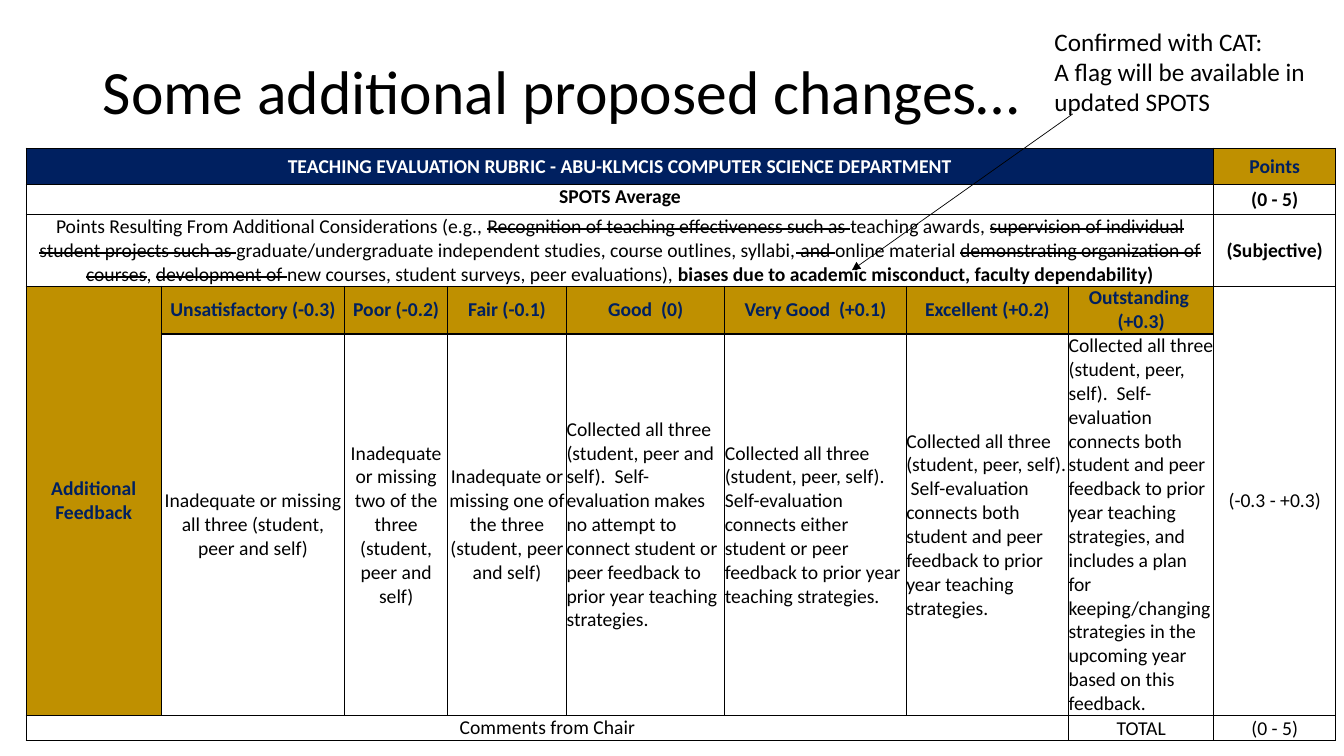
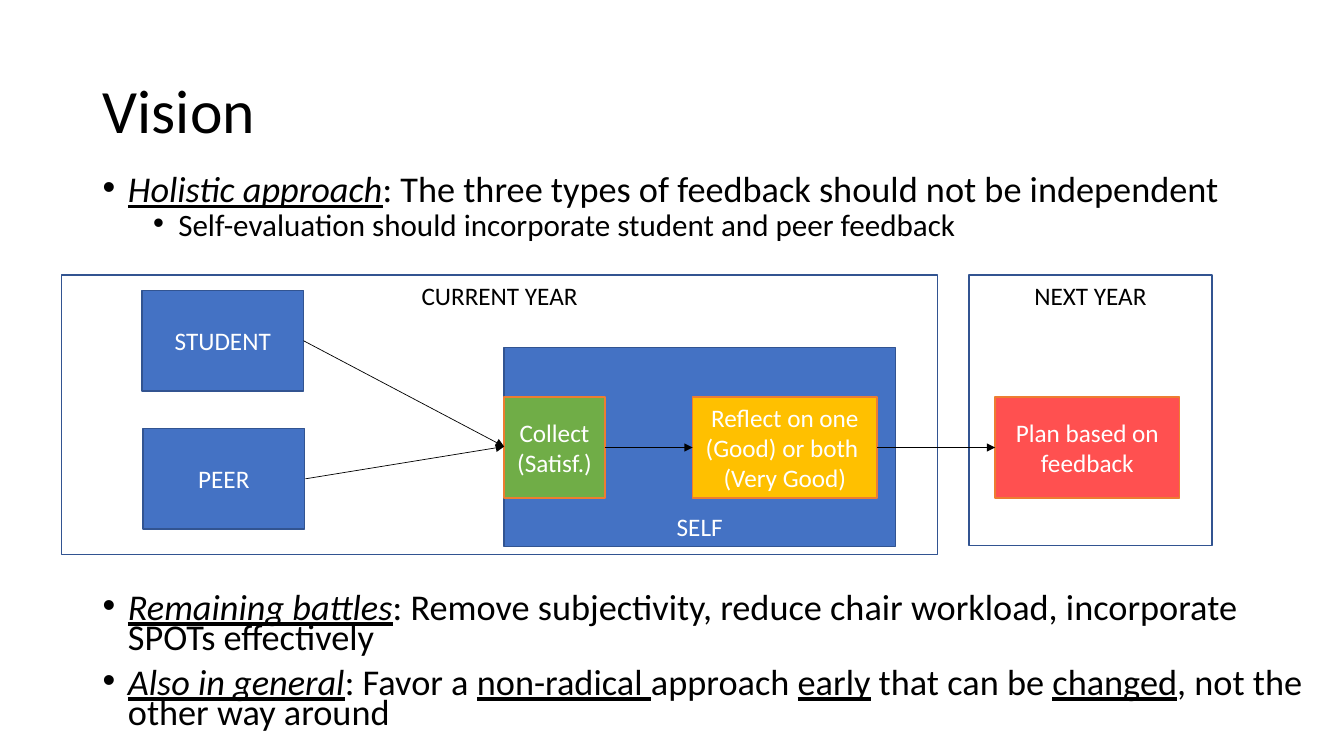
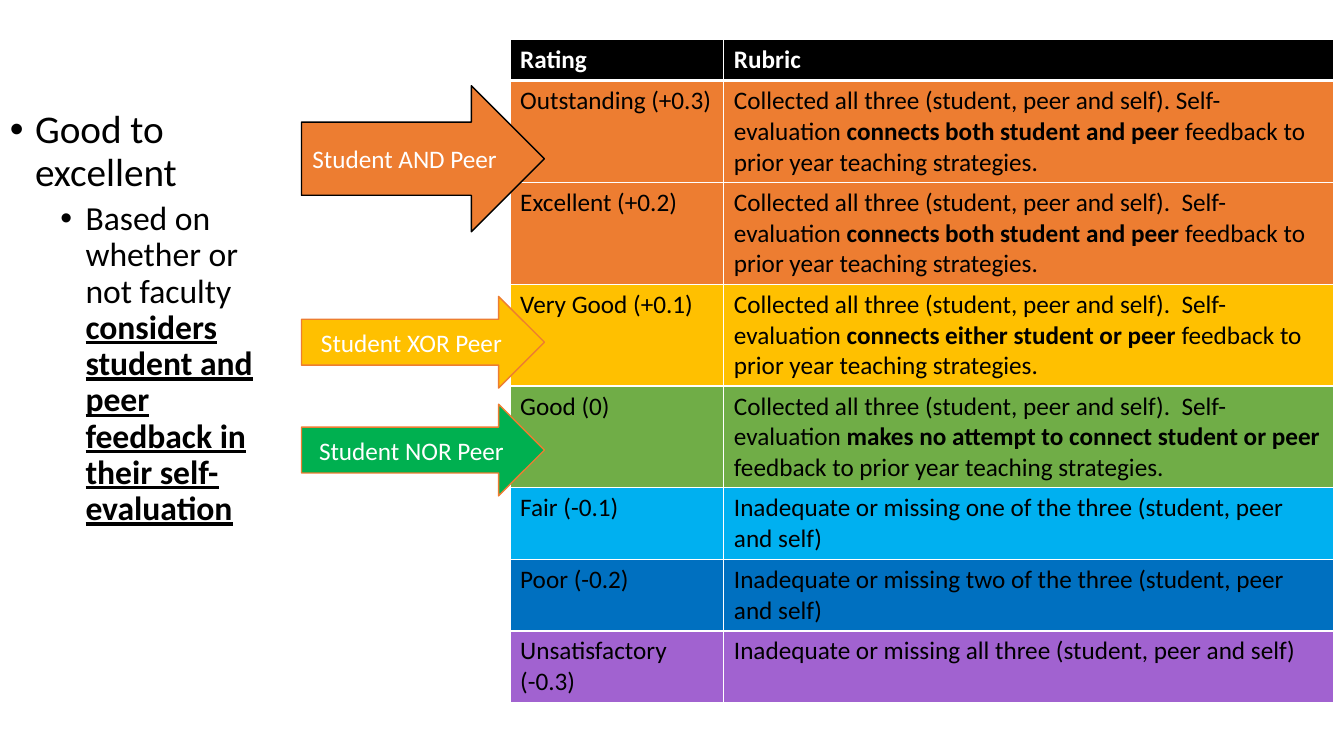
"""Build three slides on a proposed teaching evaluation rubric."""
from lxml import etree
from pptx import Presentation
from pptx.dml.color import RGBColor
from pptx.enum.shapes import MSO_CONNECTOR, MSO_SHAPE
from pptx.enum.text import MSO_ANCHOR, PP_ALIGN
from pptx.oxml.ns import qn
from pptx.util import Emu, Pt

LEFT, CENTER = PP_ALIGN.LEFT, PP_ALIGN.CENTER
TOP, MIDDLE, BOTTOM = MSO_ANCHOR.TOP, MSO_ANCHOR.MIDDLE, MSO_ANCHOR.BOTTOM
RECTANGLE, RIGHT_ARROW = MSO_SHAPE.RECTANGLE, MSO_SHAPE.RIGHT_ARROW
STRAIGHT = MSO_CONNECTOR.STRAIGHT

EMU_PER_PX = 9144
FONT = "Calibri"
TITLE_ONLY, BLANK = 5, 6
COLORS = {
    "black": "000000", "white": "FFFFFF", "navy": "002060", "gold": "BF9000",
    "blue": "4472C4", "edge": "325491", "green": "70AD47", "orange": "ED7D31",
    "amber": "FFC000", "red": "FF5050", "emerald": "00B050", "sky": "00B0F0",
    "ocean": "0070C0", "purple": "A162D0",
}
FLAGS = {"b": "bold", "i": "italic", "u": "underline"}


def px(length):
    return Emu(length * EMU_PER_PX)


def rgb(name):
    return RGBColor.from_string(COLORS[name])


def apply(target, values):
    for name, value in values.items():
        setattr(target, name, value)


class Deck:
    """Holds the shared style and the slide being filled."""

    def __init__(self, width, height):
        self.presentation = Presentation()
        apply(self.presentation, {"slide_width": px(width), "slide_height": px(height)})
        self.slide = None

    def add_slide(self, title=None, top=0):
        layout = self.presentation.slide_layouts[BLANK if title is None else TITLE_ONLY]
        self.slide = self.presentation.slides.add_slide(layout)
        if title is not None:
            placeholder = self.slide.shapes.title
            apply(placeholder, {"left": px(92), "top": px(top), "width": px(1150), "height": px(145)})
            placeholder.text_frame.vertical_anchor = MIDDLE
            self.set_text(placeholder.text_frame, [title], size=44, line_spacing=0.9)

    def set_runs(self, paragraph, runs, size=18, color="black", bold=False, **layout):
        apply(paragraph, {"alignment": LEFT, **layout})
        for item in [runs] if isinstance(runs, str) else runs:
            text, flags = (item, "") if isinstance(item, str) else item
            run = paragraph.add_run()
            run.text = text
            apply(run.font, {"name": FONT, "size": Pt(size), "bold": bold})
            apply(run.font, {FLAGS[flag]: True for flag in flags if flag in FLAGS})
            run.font.color.rgb = rgb(color)
            if "s" in flags:
                run.font._element.set("strike", "sngStrike")

    def set_text(self, frame, paragraphs, **style):
        frame.word_wrap = True
        for index, runs in enumerate(paragraphs):
            paragraph = frame.add_paragraph() if index else frame.paragraphs[0]
            self.set_runs(paragraph, runs, **style)

    def text_box(self, box, paragraphs):
        shape = self.slide.shapes.add_textbox(*map(px, box))
        self.set_text(shape.text_frame, paragraphs)

    def bullets(self, box, items, sizes, line_spacing):
        frame = self.slide.shapes.add_textbox(*map(px, box)).text_frame
        frame.word_wrap = True
        for index, (level, space, runs) in enumerate(items):
            paragraph = frame.add_paragraph() if index else frame.paragraphs[0]
            self.set_runs(paragraph, runs, size=sizes[level], level=level,
                          line_spacing=line_spacing, space_before=Pt(space))
            properties = paragraph._p.get_or_add_pPr()
            properties.set("marL", str(px(25 + 50 * level)))
            properties.set("indent", str(px(-25)))
            etree.SubElement(properties, qn("a:buFont"), typeface="Arial")
            etree.SubElement(properties, qn("a:buChar"), char="•")

    def shape(self, kind, box, paragraphs, fill=None, line="orange", color="white", anchor=MIDDLE):
        shape = self.slide.shapes.add_shape(kind, *map(px, box))
        shape.shadow.inherit = False
        if fill:
            shape.fill.solid()
            shape.fill.fore_color.rgb = rgb(fill)
        else:
            shape.fill.background()
        shape.line.color.rgb = rgb(line)
        shape.line.width = Pt(1)
        shape.text_frame.vertical_anchor = anchor
        self.set_text(shape.text_frame, paragraphs, color=color, alignment=CENTER)

    def arrow(self, start, end):
        connector = self.slide.shapes.add_connector(STRAIGHT, *map(px, start + end))
        connector.line.color.rgb = rgb("black")
        connector.line.width = Pt(0.5)
        etree.SubElement(connector.line._get_or_add_ln(), qn("a:tailEnd"), type="triangle")
        etree.SubElement(connector._element.spPr, qn("a:effectLst"))

    def table(self, left, top, columns, rows, border):
        box = (left, top, sum(columns), sum(rows))
        table = self.slide.shapes.add_table(len(rows), len(columns), *map(px, box)).table
        apply(table, {"first_row": False, "horz_banding": False})
        for column, width in zip(table.columns, columns):
            column.width = px(width)
        for row, height in zip(table.rows, rows):
            row.height = px(height)
        for cell in table.iter_cells():
            self.borders(cell, border)
        return table

    def borders(self, cell, color, bottom=1):
        properties = cell._tc.get_or_add_tcPr()
        for side, width in {"L": 1, "R": 1, "T": 1, "B": bottom}.items():
            tag = qn(f"a:ln{side}")
            for old in properties.findall(tag):
                properties.remove(old)
            line = etree.SubElement(properties, tag, w=str(Pt(width)))
            fill = etree.SubElement(line, qn("a:solidFill"))
            etree.SubElement(fill, qn("a:srgbClr"), val=COLORS[color])

    def cell(self, table, place, runs, fill="white", span=(1, 1), anchor=TOP, inset=None, **style):
        row, column = place
        cell = table.cell(row, column)
        if span != (1, 1):
            cell.merge(table.cell(row + span[0] - 1, column + span[1] - 1))
        cell.fill.solid()
        cell.fill.fore_color.rgb = rgb(fill)
        cell.vertical_anchor = anchor
        if inset is not None:
            sides = ("left", "right", "top", "bottom")
            apply(cell, {f"margin_{side}": px(inset) for side in sides})
        self.set_text(cell.text_frame, [runs], **style)


def changes_slide(deck):
    deck.add_slide("Some additional proposed changes…", 21)
    table = deck.table(26, 147, [134, 182, 102, 118, 157, 180, 161, 144, 121],
                       [36, 30, 71, 47, 374, 25], "black")

    def put(row, column, runs, **style):
        style = {"size": 14, "alignment": CENTER, "anchor": MIDDLE, "inset": 0, **style}
        deck.cell(table, (row, column), runs, **style)

    heading = {"fill": "gold", "color": "navy", "bold": True}
    considerations = [
        "Points Resulting From Additional Considerations (e.g., ",
        ("Recognition of teaching effectiveness such as ", "s"), "teaching awards, ",
        ("supervision of individual student projects such as ", "s"),
        "graduate/undergraduate independent studies, course outlines, syllabi,",
        (" and ", "s"), "online material ",
        ("demonstrating organization of courses", "s"), ", ", ("development of ", "s"),
        "new courses, student surveys, peer evaluations),",
        (" biases due to academic misconduct, faculty dependability)", "b"),
    ]
    put(0, 0, "TEACHING EVALUATION RUBRIC - ABU-KLMCIS COMPUTER SCIENCE DEPARTMENT",
        span=(1, 8), fill="navy", color="white", bold=True)
    put(0, 8, "Points", **heading)
    put(1, 0, "SPOTS Average", span=(1, 8), anchor=TOP, bold=True)
    put(1, 8, "(0 - 5)", bold=True)
    put(2, 0, considerations, span=(1, 8), anchor=TOP)
    put(2, 8, "(Subjective)", bold=True)
    put(3, 0, "Additional Feedback", span=(2, 1), **heading)
    put(3, 8, "(-0.3 - +0.3)", span=(2, 1))

    missing = "Inadequate or missing {} three (student, peer and self)"
    collected = "Collected all three (student, peer, self).  Self-evaluation connects "
    prior = " feedback to prior year teaching strategies"
    ratings = [
        ("Unsatisfactory (-0.3)", missing.format("all"), CENTER),
        ("Poor (-0.2)", missing.format("two of the"), CENTER),
        ("Fair (-0.1)", missing.format("one of the"), CENTER),
        ("Good  (0)", "Collected all three (student, peer and self).  Self-evaluation makes "
         f"no attempt to connect student or peer{prior}.", LEFT),
        ("Very Good  (+0.1)", f"{collected}either student or peer{prior}.", LEFT),
        ("Excellent (+0.2)", f"{collected}both student and peer{prior}.", LEFT),
        ("Outstanding  (+0.3)", f"{collected}both student and peer{prior}, and includes a plan for "
         "keeping/changing strategies in the upcoming year based on this feedback.", LEFT),
    ]
    for column, (rating, rubric, alignment) in enumerate(ratings, start=1):
        put(3, column, rating, **heading)
        put(4, column, rubric, alignment=alignment)
    put(5, 0, "Comments from Chair", span=(1, 7), anchor=TOP)
    put(5, 7, "TOTAL")
    put(5, 8, "(0 - 5)")

    deck.arrow((1064, 113), (845, 268))
    deck.text_box((1036, 21, 272, 101),
                  ["Confirmed with CAT:", "A flag will be available in", "updated SPOTS"])


def vision_slide(deck):
    deck.add_slide("Vision", 40)
    deck.bullets((92, 172, 1229, 570), [
        (0, 10, [("Holistic approach", "iu"),
                 ": The three types of feedback should not be independent"]),
        (1, 5, "Self-evaluation should incorporate student and peer feedback"),
        (0, 253, [("Remaining battles", "iu"),
                  ": Remove subjectivity, reduce chair workload, incorporate SPOTs effectively"]),
        (0, 10, [("Also in general", "iu"), ": Favor a ", ("non-radical ", "u"), "approach ",
                 ("early", "u"), " that can be ", ("changed", "u"), ", not the other way around"]),
    ], sizes=(25.9, 22.2), line_spacing=0.7)

    for box, year in [((61, 273, 869, 277), "CURRENT YEAR"), ((961, 273, 241, 268), "NEXT YEAR")]:
        deck.shape(RECTANGLE, box, [year], line="edge", color="black", anchor=TOP)
    for box, source, anchor in [((141, 288, 160, 100), "STUDENT", MIDDLE),
                                ((142, 425, 160, 100), "PEER", MIDDLE),
                                ((500, 345, 388, 197), "SELF", BOTTOM)]:
        deck.shape(RECTANGLE, box, [source], fill="blue", line="edge", anchor=anchor)
    for left, width, fill, step in [
        (500, 100, "green", ["Collect", "(Satisf.)"]),
        (687, 183, "amber", ["Reflect on one (Good) or both ", "(Very Good)"]),
        (987, 183, "red", ["Plan based on feedback"]),
    ]:
        deck.shape(RECTANGLE, (left, 394, width, 100), step, fill=fill)
    for start, end in [((301, 338), (500, 443)), ((303, 475), (500, 443)),
                       ((600, 444), (687, 444)), ((870, 444), (987, 444))]:
        deck.arrow(start, end)


def rating_slide(deck):
    deck.add_slide()
    deck.bullets((0, 104, 286, 476), [
        (0, 10, "Good to excellent"),
        (1, 5, ["Based on whether or not faculty ",
                ("considers student and peer feedback in their self-evaluation", "bu")]),
    ], sizes=(28, 24), line_spacing=0.9)

    def collected(finding, gap="  "):
        return [f"Collected all three (student, peer and self).{gap}Self-evaluation ",
                (finding, "b"), " feedback to prior year teaching strategies."]

    both = "connects both student and peer"
    missing = "Inadequate or missing {} three (student, peer and self)"
    ratings = [
        ("Outstanding (+0.3)", collected(both, " "), "orange"),
        ("Excellent (+0.2)", collected(both), "orange"),
        ("Very Good (+0.1)", collected("connects either student or peer"), "amber"),
        ("Good (0)", collected("makes no attempt to connect student or peer"), "green"),
        ("Fair (-0.1)", missing.format("one of the"), "sky"),
        ("Poor (-0.2)", missing.format("two of the"), "ocean"),
        ("Unsatisfactory (-0.3)", missing.format("all"), "purple"),
    ]
    table = deck.table(506, 39, [212, 605], [41] + [101] * 4 + [71] * 3, "white")
    for column, heading in enumerate(("Rating", "Rubric")):
        deck.borders(table.cell(0, column), "white", bottom=3)
        deck.cell(table, (0, column), heading, fill="black", color="white", bold=True)
    for row, (rating, rubric, fill) in enumerate(ratings, start=1):
        for column, runs in enumerate((rating, rubric)):
            deck.cell(table, (row, column), runs, fill=fill)

    for top, height, fill, line, operator in [(85, 145, "orange", "black", "AND"),
                                              (294, 91, "amber", "orange", "XOR"),
                                              (401, 91, "emerald", "orange", "NOR")]:
        deck.shape(RIGHT_ARROW, (299, top, 241, height), [f"Student {operator} Peer"],
                   fill=fill, line=line)


def main():
    deck = Deck(1333, 750)
    changes_slide(deck)
    vision_slide(deck)
    rating_slide(deck)
    deck.presentation.save("out.pptx")


if __name__ == "__main__":
    main()
